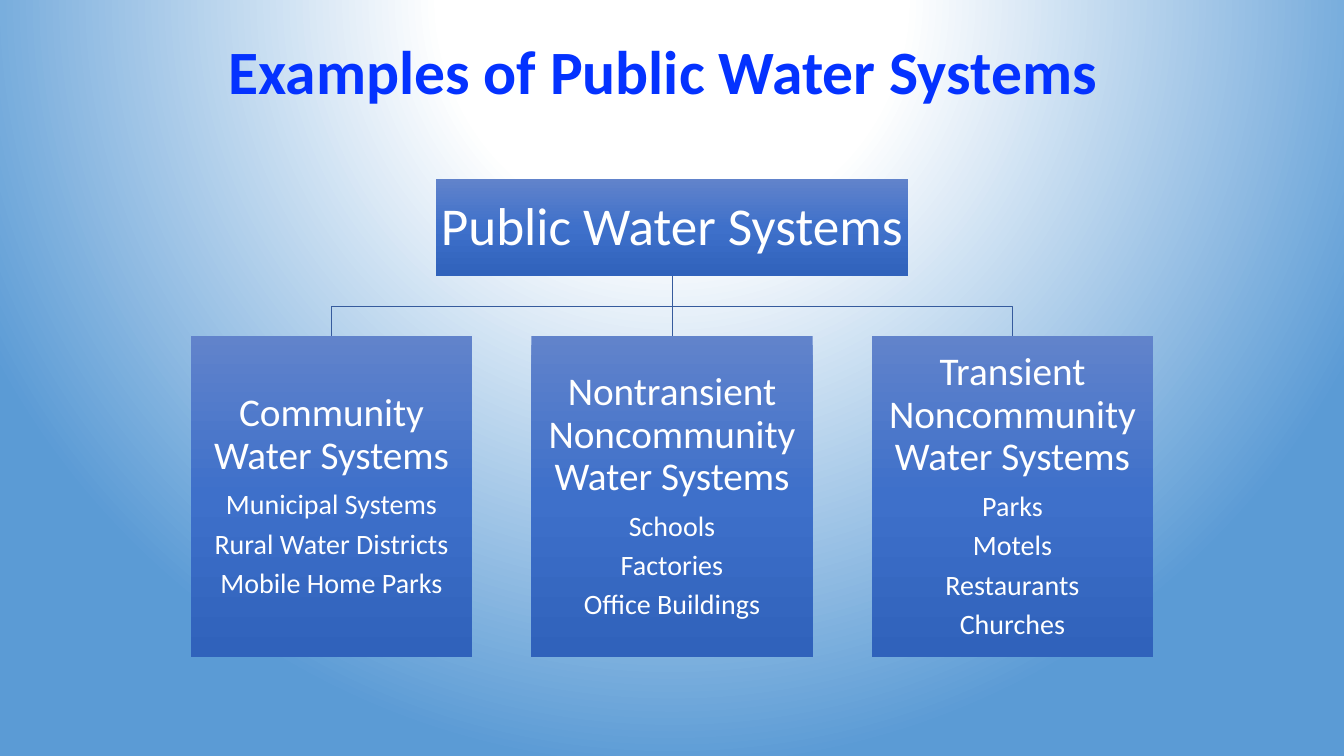
import pptx
import pptx.util
import pptx.dml.color
import pptx.enum.shapes
import pptx.enum.text
import pptx.oxml
import pptx.oxml.ns
import lxml.etree

Pt = pptx.util.Pt
RGB = pptx.dml.color.RGBColor.from_string
MIDDLE = pptx.enum.text.MSO_ANCHOR.MIDDLE
CENTER = pptx.enum.text.PP_ALIGN.CENTER
RECT = pptx.enum.shapes.MSO_SHAPE.RECTANGLE
LINE = pptx.enum.shapes.MSO_CONNECTOR.STRAIGHT

colors = {
    "title": "0432FF", "text": "FFFFFF", "line": "365B9D",
    "white": "FFFFFF", "sky": "5B9BD5",
    "top": "6183CB", "mid": "3E70CA", "low": "3062BB",
}


def shade(fill, owner, stops, kind):
    fill.solid()
    old = owner.find(pptx.oxml.ns.qn("a:solidFill"))
    marks = "".join(
        f'<a:gs pos="{pos * 1000}"><a:srgbClr val="{colors[name]}"/></a:gs>'
        for pos, name in stops
    )
    new = pptx.oxml.parse_xml(
        f'<a:gradFill {pptx.oxml.ns.nsdecls("a")} rotWithShape="1">'
        f"<a:gsLst>{marks}</a:gsLst>{kind}</a:gradFill>"
    )
    owner.replace(old, new)


def add_box(left, top, width, height, inset, lines):
    box = slide.shapes.add_shape(RECT, Pt(left), Pt(top), Pt(width), Pt(height))
    box.shadow.inherit = False
    box.line.fill.background()
    shade(box.fill, box._element.spPr,
          [(0, "top"), (50, "mid"), (100, "low")],
          '<a:lin ang="5400000" scaled="0"/>')
    frame = box.text_frame
    frame.word_wrap = True
    frame.vertical_anchor = MIDDLE
    frame.margin_left = frame.margin_right = Pt(inset)
    frame.margin_top = frame.margin_bottom = Pt(inset)
    for i, (text, size) in enumerate(lines):
        para = frame.paragraphs[0] if i == 0 else frame.add_paragraph()
        para.text = text
        para.alignment = CENTER
        para.line_spacing = 0.9
        para.space_after = Pt(0.33 * size)
        para.font.name = "Calibri"
        para.font.size = Pt(size)
        para.font.color.rgb = RGB(colors["text"])
    return box


deck = pptx.Presentation()
deck.slide_width = Pt(960)
deck.slide_height = Pt(540)
slide = deck.slides.add_slide(deck.slide_layouts[6])

back = slide.background.fill
back.solid()
shade(back, slide._element.find(".//" + pptx.oxml.ns.qn("p:bgPr")),
      [(0, "white"), (30, "white"), (100, "sky")],
      '<a:path path="circle"><a:fillToRect l="50000" t="-80000" '
      'r="50000" b="180000"/></a:path>')

title = slide.shapes.add_textbox(Pt(156), Pt(21.6), Pt(648), Pt(63.4))
title.text_frame.word_wrap = True
title.text_frame.vertical_anchor = MIDDLE
head = title.text_frame.paragraphs[0]
head.text = "Examples of Public Water Systems"
head.line_spacing = 0.9
head.font.name = "Calibri"
head.font.size = Pt(44)
head.font.bold = True
head.font.color.rgb = RGB(colors["title"])

center, pitch = 480, 243.2
wide, tall = 201, 229.6
base, bend, row = 197.4, 218.6, 239.8

root = add_box(center - 168.5, 128.2, 337, base - 128.2, 2,
               [("Public Water Systems", 38)])

groups = [
    ("Community Water Systems",
     ["Municipal Systems", "Rural Water Districts", "Mobile Home Parks"]),
    ("Nontransient Noncommunity Water Systems",
     ["Schools", "Factories", "Office Buildings"]),
    ("Transient Noncommunity Water Systems",
     ["Parks", "Motels", "Restaurants", "Churches"]),
]
for i, (name, items) in enumerate(groups):
    axis = center + (i - 1) * pitch
    box = add_box(axis - wide / 2, row, wide, tall, 1.4,
                  [(name, 28)] + [(item, 20) for item in items])
    if axis == center:
        link = slide.shapes.add_connector(
            LINE, Pt(center), Pt(base), Pt(center), Pt(row))
        link.begin_connect(root, 2)
        link.end_connect(box, 0)
        lxml.etree.SubElement(link._element.spPr,
                              pptx.oxml.ns.qn("a:effectLst"))
    else:
        path = slide.shapes.build_freeform(Pt(center), Pt(base))
        path.add_line_segments(
            [(Pt(center), Pt(bend)), (Pt(axis), Pt(bend)), (Pt(axis), Pt(row))],
            close=False)
        link = path.convert_to_shape()
        link.fill.background()
        link.shadow.inherit = False
    link.line.color.rgb = RGB(colors["line"])
    link.line.width = Pt(0.5)

deck.save("out.pptx")
